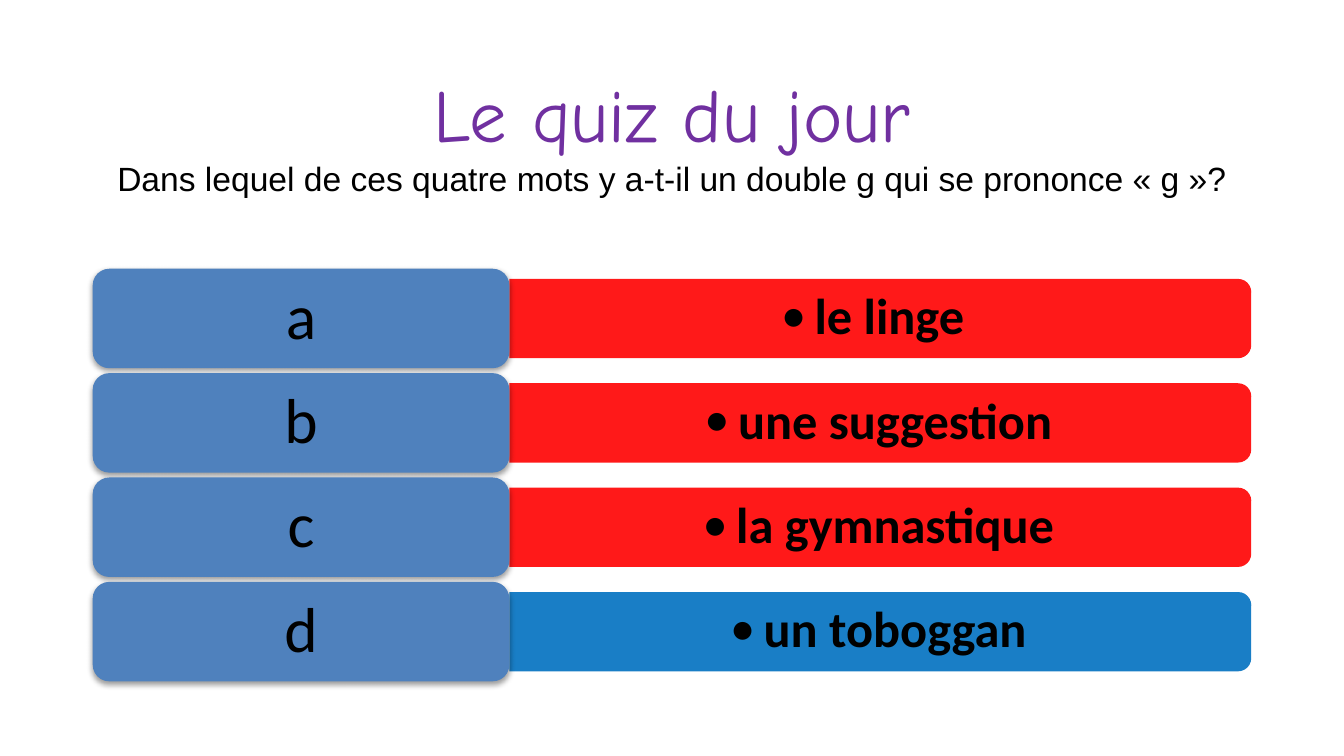
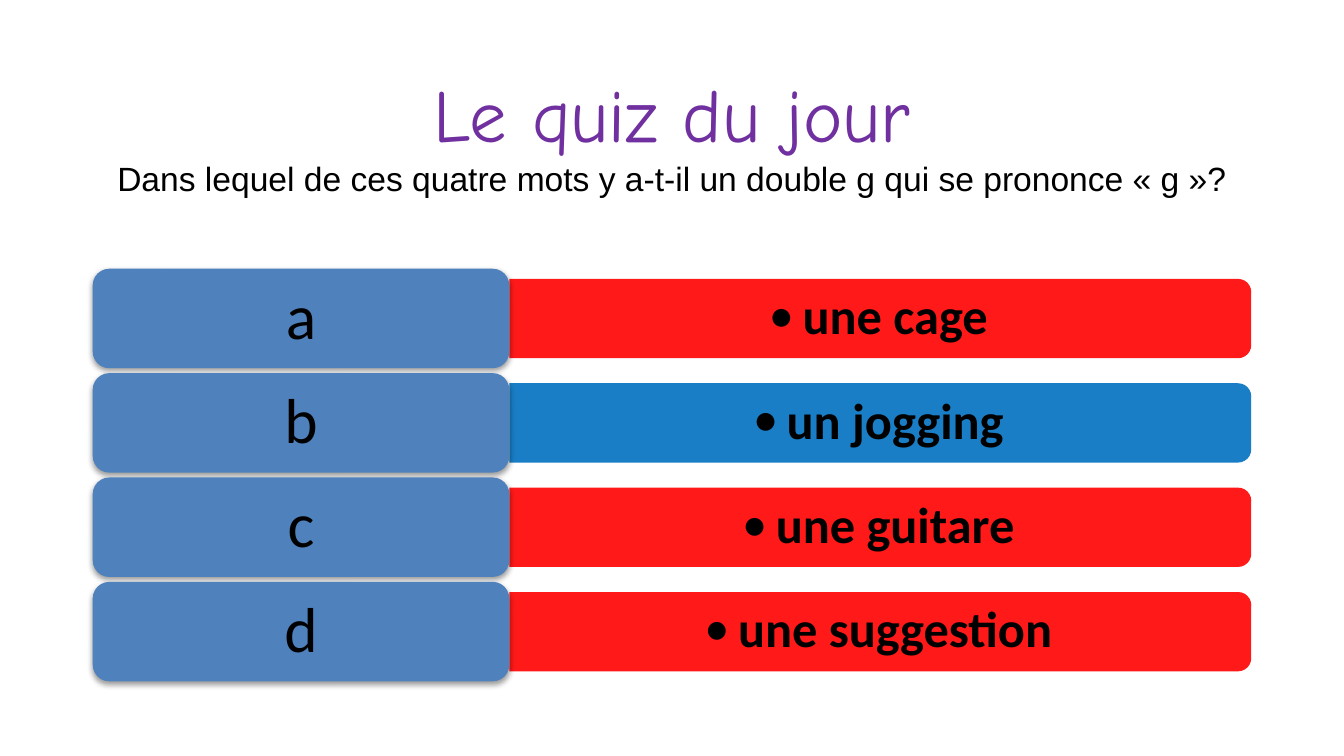
from lxml import etree
from pptx import Presentation
from pptx.dml.color import RGBColor
from pptx.enum.shapes import MSO_SHAPE
from pptx.enum.text import MSO_ANCHOR, MSO_AUTO_SIZE, PP_ALIGN
from pptx.oxml.ns import qn
from pptx.util import Inches, Pt

CENTER = PP_ALIGN.CENTER
MIDDLE = MSO_ANCHOR.MIDDLE
NO_FIT = MSO_AUTO_SIZE.NONE
ROUNDED = MSO_SHAPE.ROUNDED_RECTANGLE
ROUNDED_TOP = MSO_SHAPE.ROUND_2_SAME_RECTANGLE

TITLE = "Le quiz du jour"
QUESTION = "Dans lequel de ces quatre mots y a-t-il un double g qui se prononce « g »?"
LETTERS = "abcd"
QUIZZES = [
    {"words": ["le linge ", "une suggestion", "la gymnastique", "un toboggan"], "answer": "d"},
    {"words": ["une cage", "un jogging", "une guitare", "une suggestion"], "answer": "b"},
]

COLORS = {
    "title": "7030A0",
    "text": "000000",
    "label": "4F81BD",
    "wrong": "FF0000",
    "right": "0070C0",
}
FORMATS = {
    "title": {"name": "Comic Neue", "size": Pt(40)},
    "question": {"name": "Arial", "size": Pt(18)},
    "letter": {"name": "Calibri", "size": Pt(34)},
    "word": {"name": "Calibri", "size": Pt(27), "bold": True},
}

PAGE_WIDTH = Inches(10)
PAGE_HEIGHT = PAGE_WIDTH * 9 // 16
LEFT, FIRST_TOP, LAST_TOP = 0.69, 2, 4.33
PITCH = (LAST_TOP - FIRST_TOP) / (len(LETTERS) - 1)
LABEL_WIDTH, LABEL_HEIGHT = 3.1, 0.74
BAR_LEFT, BAR_LENGTH, BAR_HEIGHT = LEFT + LABEL_WIDTH, 5.52, 0.59
WORD_WIDTH, WORD_HEIGHT = 5.49, 0.53
INDENT = Inches(0.25)


def inches(*lengths):
    return [Inches(length) for length in lengths]


def add_span(para, text, style, color="text"):
    span = para.add_run()
    span.text = text
    for name, value in FORMATS[style].items():
        setattr(span.font, name, value)
    span.font.color.rgb = RGBColor.from_string(COLORS[color])


def set_frame(frame, side=0.1, edge=0.05):
    values = {
        "word_wrap": True,
        "auto_size": NO_FIT,
        "vertical_anchor": MIDDLE,
        "margin_left": Inches(side),
        "margin_right": Inches(side),
        "margin_top": Inches(edge),
        "margin_bottom": Inches(edge),
    }
    for name, value in values.items():
        setattr(frame, name, value)
    para = frame.paragraphs[0]
    para.alignment = CENTER
    return para


def add_plain_shape(page, kind, area, color):
    shape = page.shapes.add_shape(kind, *inches(*area))
    shape.shadow.inherit = False
    shape.fill.solid()
    shape.fill.fore_color.rgb = RGBColor.from_string(COLORS[color])
    shape.line.fill.background()
    return shape


def add_alpha(color_element, percent):
    etree.SubElement(color_element, qn("a:alpha"), val=str(percent * 1000))


def add_shadow(shape):
    effects = shape.element.spPr.find(qn("a:effectLst"))
    shadow = etree.SubElement(
        effects, qn("a:outerShdw"), blurRad=str(Pt(3.1)), dist=str(Pt(1.6)),
        dir="5400000", rotWithShape="0",
    )
    add_alpha(etree.SubElement(shadow, qn("a:srgbClr"), val=COLORS["text"]), 38)


def add_title(page):
    box = page.shapes.title
    box.left, box.top, box.width, box.height = inches(LEFT, 0.2, 8.62, 1.58)
    para = set_frame(box.text_frame)
    add_span(para, TITLE, "title", "title")
    para.add_line_break()
    line_break = para.runs[0]._r.getnext()
    etree.SubElement(line_break, qn("a:rPr"), sz="4000")
    add_span(para, QUESTION, "question")


def add_bar(page, middle, color):
    center = BAR_LEFT + BAR_LENGTH / 2
    area = (center - BAR_HEIGHT / 2, middle - BAR_LENGTH / 2, BAR_HEIGHT, BAR_LENGTH)
    bar = add_plain_shape(page, ROUNDED_TOP, area, color)
    bar.rotation = 90
    add_alpha(bar.element.spPr.find(f"{qn('a:solidFill')}/{qn('a:srgbClr')}"), 90)


def add_word(page, middle, word):
    box = page.shapes.add_textbox(
        *inches(BAR_LEFT, middle - WORD_HEIGHT / 2, WORD_WIDTH, WORD_HEIGHT)
    )
    para = set_frame(box.text_frame, 0.11, 0.06)
    para.level = 1
    para.line_spacing = 0.9
    properties = para._p.get_or_add_pPr()
    properties.set("marL", str(INDENT))
    properties.set("indent", str(-INDENT))
    etree.SubElement(properties, qn("a:buFont"), typeface="Calibri")
    etree.SubElement(properties, qn("a:buChar"), char="•")
    add_span(para, word, "word")


def add_label(page, top, letter):
    label = add_plain_shape(page, ROUNDED, (LEFT, top, LABEL_WIDTH, LABEL_HEIGHT), "label")
    add_shadow(label)
    para = set_frame(label.text_frame, 0.14, 0.07)
    para.line_spacing = 0.9
    add_span(para, letter, "letter")


def add_quiz(deck, quiz):
    page = deck.slides.add_slide(deck.slide_layouts[5])
    add_title(page)
    for row, (letter, word) in enumerate(zip(LETTERS, quiz["words"])):
        top = FIRST_TOP + row * PITCH
        middle = top + LABEL_HEIGHT / 2
        add_bar(page, middle, "right" if letter == quiz["answer"] else "wrong")
        add_word(page, middle, word)
        add_label(page, top, letter)


def main():
    deck = Presentation()
    deck.slide_width, deck.slide_height = PAGE_WIDTH, PAGE_HEIGHT
    for quiz in QUIZZES:
        add_quiz(deck, quiz)
    deck.save("out.pptx")


if __name__ == "__main__":
    main()
